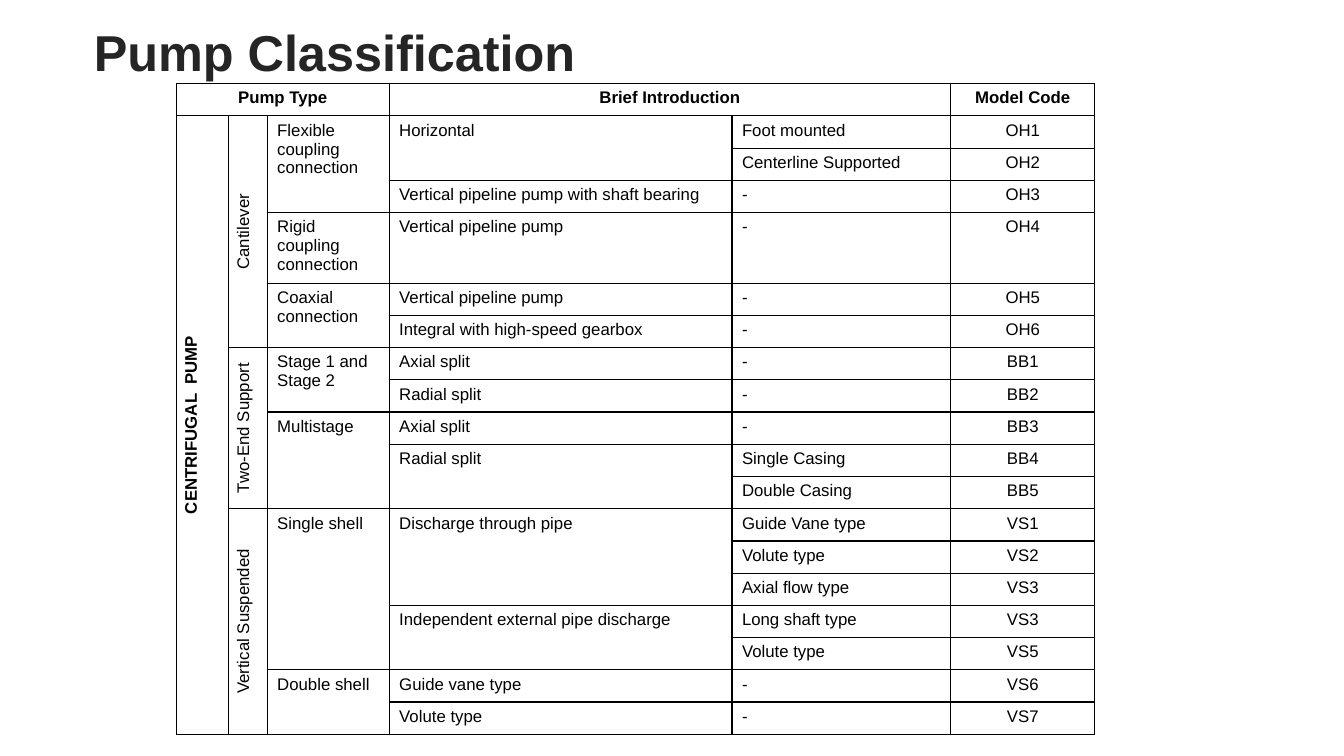
from lxml.etree import SubElement
from pptx import Presentation
from pptx.dml.color import RGBColor
from pptx.enum.text import MSO_ANCHOR, MSO_AUTO_SIZE, PP_ALIGN
from pptx.oxml.ns import qn
from pptx.util import Inches, Pt

TITLE = "Pump Classification"
FONT = "Arial"
BLACK, WHITE, DARK = "000000", "FFFFFF", "252525"

# None continues the cell to its left in the header, the cell above elsewhere.
HEADER = ("Pump Type", None, None, "Brief Introduction", None, "Model Code")
PUMPS = [
    ("CENTRIFUGAL  PUMP", "Cantilever", "Flexible coupling connection", "Horizontal", "Foot mounted", "OH1"),
    (None, None, None, None, "Centerline Supported", "OH2"),
    (None, None, None, "Vertical pipeline pump with shaft bearing", "-", "OH3"),
    (None, None, "Rigid coupling connection", "Vertical pipeline pump", "-", "OH4"),
    (None, None, "Coaxial connection", "Vertical pipeline pump", "-", "OH5"),
    (None, None, None, "Integral with high-speed gearbox", "-", "OH6"),
    (None, "Two-End Support", "Stage 1 and Stage 2", "Axial split", "-", "BB1"),
    (None, None, None, "Radial split", "-", "BB2"),
    (None, None, "Multistage", "Axial split", "-", "BB3"),
    (None, None, None, "Radial split", "Single Casing", "BB4"),
    (None, None, None, None, "Double Casing", "BB5"),
    (None, "Vertical Suspended", "Single shell", "Discharge through pipe", "Guide Vane type", "VS1"),
    (None, None, None, None, "Volute type", "VS2"),
    (None, None, None, None, "Axial flow type", "VS3"),
    (None, None, None, "Independent external pipe discharge", "Long shaft type", "VS3"),
    (None, None, None, None, "Volute type", "VS5"),
    (None, None, "Double shell", "Guide vane type", "-", "VS6"),
    (None, None, None, "Volute type", "-", "VS7"),
]
ROWS = [HEADER] + PUMPS
COLUMN_WIDTHS = (0.52, 0.38, 1.21, 3.4, 2.17, 1.43)
ROW_HEIGHT, TALL_ROW_HEIGHT, TALL_ROW = 0.32, 0.68, 4
ROTATED_COLUMNS = (0, 1)
CODE_COLUMN = 5


def color(value):
    return RGBColor.from_string(value)


def style_font(font, size, bold, value):
    font.name, font.size, font.bold = FONT, Pt(size), bold
    font.color.rgb = color(value)


def add_borders(cell):
    properties = cell._tc.get_or_add_tcPr()
    for side in ("lnL", "lnR", "lnT", "lnB"):
        line = SubElement(properties, qn(f"a:{side}"), w=str(Pt(1)))
        fill = SubElement(line, qn("a:solidFill"))
        SubElement(fill, qn("a:srgbClr"), val=BLACK)


def span_end(row, column):
    """Return the last row and column that the cell starting here covers."""
    last_row, last_column = row, column
    if row == 0:
        while last_column + 1 < len(HEADER) and HEADER[last_column + 1] is None:
            last_column += 1
    else:
        while last_row + 1 < len(ROWS) and ROWS[last_row + 1][column] is None:
            last_row += 1
    return last_row, last_column


def fill_cell(table, row, column, text):
    cell = table.cell(row, column)
    end = span_end(row, column)
    if end != (row, column):
        cell.merge(table.cell(*end))
    rotated = row > 0 and column in ROTATED_COLUMNS
    if rotated:
        cell._tc.get_or_add_tcPr().set("vert", "vert270")
        cell.vertical_anchor = MSO_ANCHOR.MIDDLE
    cell.text_frame.text = text
    paragraph = cell.text_frame.paragraphs[0]
    if row == 0 or rotated or column == CODE_COLUMN:
        paragraph.alignment = PP_ALIGN.CENTER
    style_font(paragraph.runs[0].font, 12, row == 0 or column == 0, BLACK)


def add_title(slide):
    title = slide.shapes.title
    title.left, title.top = Inches(0.92), Inches(0.19)
    title.width, title.height = Inches(4.83), Inches(0.62)
    frame = title.text_frame
    frame.text = TITLE
    frame.margin_left, frame.margin_top = Inches(0.01), Inches(0.02)
    frame.margin_right = frame.margin_bottom = 0
    frame.word_wrap = True
    frame.auto_size = MSO_AUTO_SIZE.SHAPE_TO_FIT_TEXT
    frame.vertical_anchor = MSO_ANCHOR.TOP
    paragraph = frame.paragraphs[0]
    paragraph.alignment = PP_ALIGN.LEFT
    paragraph.line_spacing = 1.0
    paragraph.space_before = Pt(0)
    style_font(paragraph.runs[0].font, 36, True, DARK)


def add_pump_table(slide):
    heights = [TALL_ROW_HEIGHT if row == TALL_ROW else ROW_HEIGHT for row in range(len(ROWS))]
    table = slide.shapes.add_table(
        len(ROWS), len(COLUMN_WIDTHS), Inches(1.75), Inches(0.83),
        Inches(sum(COLUMN_WIDTHS)), Inches(sum(heights))).table
    table.first_row = table.horz_banding = False
    for column, width in zip(table.columns, COLUMN_WIDTHS):
        column.width = Inches(width)
    for row, height in zip(table.rows, heights):
        row.height = Inches(height)
    for row, texts in enumerate(ROWS):
        for column, text in enumerate(texts):
            cell = table.cell(row, column)
            add_borders(cell)
            cell.fill.solid()
            cell.fill.fore_color.rgb = color(WHITE)
            if text is not None:
                fill_cell(table, row, column, text)


def main():
    presentation = Presentation()
    presentation.slide_width, presentation.slide_height = Inches(13.33), Inches(7.5)
    slide = presentation.slides.add_slide(presentation.slide_layouts[5])
    add_title(slide)
    add_pump_table(slide)
    presentation.save("out.pptx")


if __name__ == "__main__":
    main()
